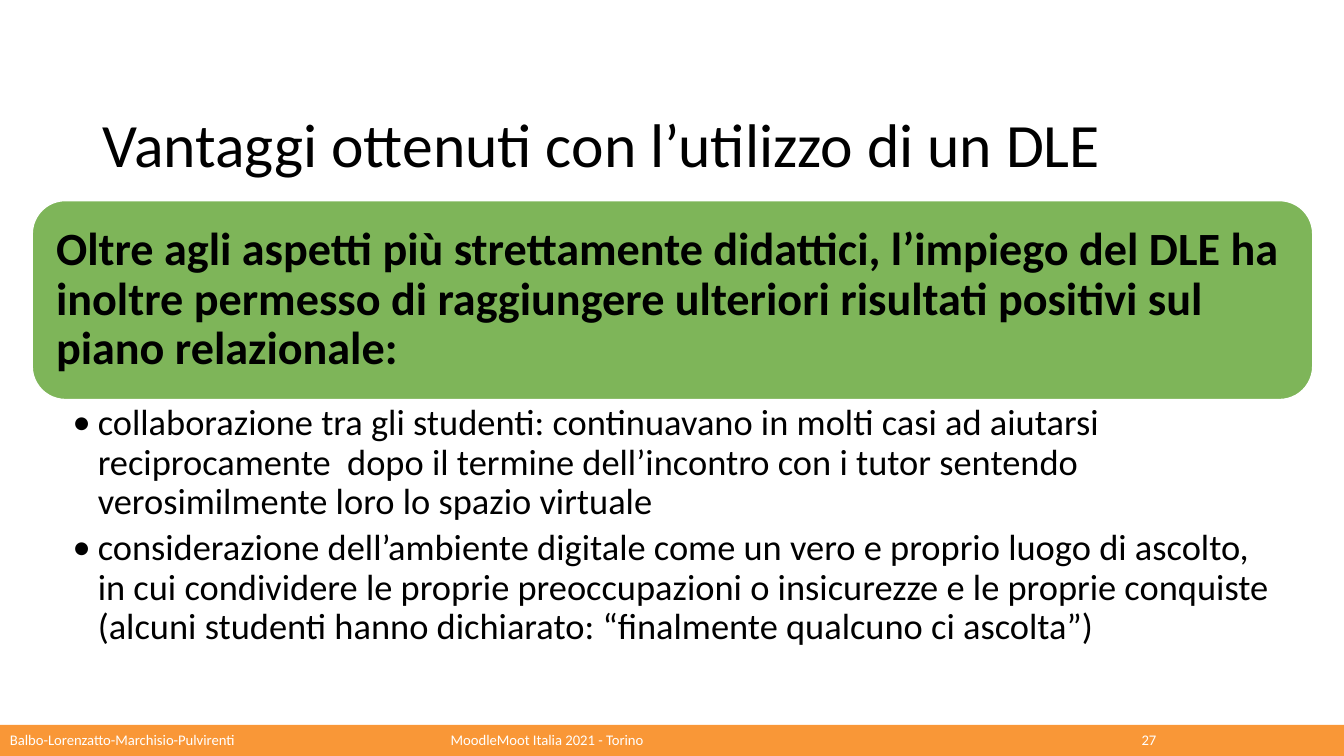
from collections import namedtuple
from dataclasses import dataclass

from lxml.etree import SubElement
from pptx import Presentation
from pptx.dml.color import RGBColor
from pptx.enum.shapes import MSO_SHAPE as Shape
from pptx.enum.text import MSO_ANCHOR as Anchor
from pptx.oxml.ns import qn
from pptx.util import Inches, Pt

Box = namedtuple("Box", "left top width height")


@dataclass(frozen=True)
class Theme:
    """Colours, font and type sizes of the slide."""
    font: str = "Calibri"
    ink: str = "000000"
    paper: str = "FFFFFF"
    green: str = "70AD47"
    orange: str = "F99737"
    title: float = 44
    lead: float = 33
    points: float = 26
    footer: float = 10.5


THEME = Theme()
SLIDE = Box(0, 0, 13.33, 7.5)
TITLE = Box(0.92, 0.74, 11.5, 1.45)
CONTENT = Box(0.32, 1.99, 12.7, 4.59)
FOOTER = Box(0, 7.19, SLIDE.width, 0.31)
LEAD_SHARE = 0.43
FOOTER_LABELS = [
    (0, 0.306, "Balbo-Lorenzatto-Marchisio-Pulvirenti"),
    (0.328, 0.3, "MoodleMoot Italia 2021 - Torino"),
    (0.842, 0.06, "27"),
]
LEAD = ("Oltre agli aspetti più strettamente didattici, l’impiego del DLE ha inoltre "
        "permesso di raggiungere ulteriori risultati positivi sul piano relazionale:")
POINTS = [
    "collaborazione tra gli studenti: continuavano in molti casi ad aiutarsi "
    "reciprocamente  dopo il termine dell’incontro con i tutor sentendo "
    "verosimilmente loro lo spazio virtuale",
    "considerazione dell’ambiente digitale come un vero e proprio luogo di ascolto, in "
    "cui condividere le proprie preoccupazioni o insicurezze e le proprie conquiste "
    "(alcuni studenti hanno dichiarato: “finalmente qualcuno ci ascolta”)",
]


def set_values(target, values):
    """Set each named attribute of the target."""
    for name, value in values.items():
        setattr(target, name, value)


def add_bullet(paragraph, indent):
    """Give the paragraph a hanging round bullet."""
    properties = paragraph._p.get_or_add_pPr()
    properties.set("marL", str(Inches(indent)))
    properties.set("indent", str(-Inches(indent)))
    SubElement(properties, qn("a:buFont")).set("typeface", THEME.font)
    SubElement(properties, qn("a:buChar")).set("char", "•")


def write_text(shape, texts, size, color=THEME.ink, bold=False, bullets=False,
               anchor=Anchor.MIDDLE, margins=(0.1, 0.05, 0.1, 0.05)):
    """Write one paragraph per text into the shape."""
    frame = shape.text_frame
    left, top, right, bottom = map(Inches, margins)
    set_values(frame, {"word_wrap": True, "vertical_anchor": anchor,
                       "margin_left": left, "margin_top": top,
                       "margin_right": right, "margin_bottom": bottom})
    for index, text in enumerate(texts):
        paragraph = frame.add_paragraph() if index else frame.paragraphs[0]
        if bullets:
            add_bullet(paragraph, 0.25)
        paragraph.add_run().text = text
        set_values(paragraph, {"line_spacing": 0.9, "alignment": 1,
                               "space_after": Pt(5 if bullets else 0)})
        set_values(paragraph.font, {"name": THEME.font, "size": Pt(size), "bold": bold})
        paragraph.font.color.rgb = RGBColor.from_string(color)


def add_text(slide, box, texts, size, **options):
    """Add a text box with the given paragraphs."""
    write_text(slide.shapes.add_textbox(*map(Inches, box)), texts, size, **options)


def add_panel(slide, kind, box, color):
    """Add a filled shape without shadow or outline."""
    panel = slide.shapes.add_shape(kind, *map(Inches, box))
    panel.shadow.inherit = False
    panel.fill.solid()
    panel.fill.fore_color.rgb = RGBColor.from_string(color)
    panel.line.fill.background()
    return panel


def add_footer(slide, box):
    """Draw the footer band and its labels."""
    add_panel(slide, Shape.RECTANGLE, box, THEME.orange)
    for start, share, label in FOOTER_LABELS:
        cell = Box(box.left + start * box.width, box.top, share * box.width, box.height)
        add_text(slide, cell, [label], THEME.footer, color=THEME.paper)


def add_content(slide, box):
    """Draw the green statement with its bullet points below."""
    lead_height = box.height * LEAD_SHARE
    panel = add_panel(slide, Shape.ROUNDED_RECTANGLE, box._replace(height=lead_height),
                      THEME.green)
    color = panel.fill._xPr.find(qn("a:solidFill")).find(qn("a:srgbClr"))
    SubElement(color, qn("a:alpha")).set("val", "90000")
    panel.line.color.rgb = RGBColor.from_string(THEME.paper)
    panel.line.width = Pt(1)
    write_text(panel, [LEAD], THEME.lead, bold=True, margins=(0.14,) * 4)
    below = box._replace(top=box.top + lead_height, height=box.height - lead_height)
    add_text(slide, below, POINTS, THEME.points, bullets=True, anchor=Anchor.TOP,
             margins=(0.4, 0.05, 0.26, 0.05))


def main():
    """Build and save the slide."""
    presentation = Presentation()
    set_values(presentation, {"slide_width": Inches(SLIDE.width),
                              "slide_height": Inches(SLIDE.height)})
    slide = presentation.slides.add_slide(presentation.slide_layouts[6])
    add_footer(slide, FOOTER)
    add_text(slide, TITLE, ["Vantaggi ottenuti con l’utilizzo di un DLE"], THEME.title)
    add_content(slide, CONTENT)
    presentation.save("out.pptx")


if __name__ == "__main__":
    main()
